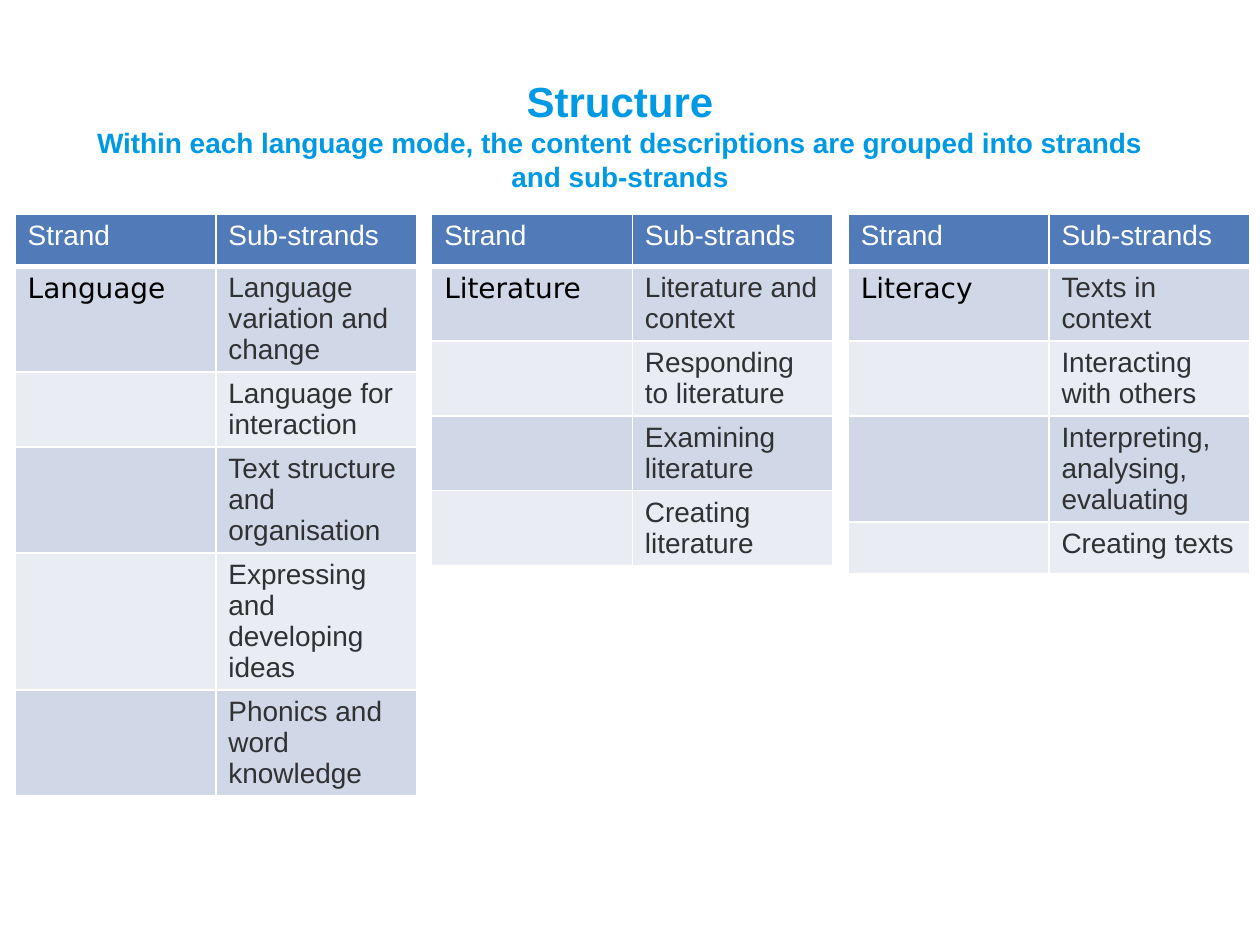
from pptx import Presentation
from pptx.dml.color import RGBColor as Color
from pptx.enum.text import MSO_ANCHOR as Anchor, MSO_AUTO_SIZE as AutoSize, PP_ALIGN as Align
from pptx.oxml import parse_xml
from pptx.oxml.ns import nsdecls
from pptx.util import Inches, Pt

TITLE_BLUE = Color(0x00, 0x99, 0xE3)
HEADER_BLUE = Color(0x51, 0x7A, 0xB8)
BAND_DARK = Color(0xD0, 0xD7, 0xE6)
BAND_LIGHT = Color(0xE9, 0xEC, 0xF3)
INK = Color(0x30, 0x31, 0x32)
BLACK = Color(0x00, 0x00, 0x00)
WHITE = Color(0xFF, 0xFF, 0xFF)

STRANDS = {
    "Language": [
        "Language variation and change",
        "Language for interaction",
        "Text structure and organisation",
        "Expressing and developing ideas",
        "Phonics and word knowledge",
    ],
    "Literature": [
        "Literature and context",
        "Responding to literature",
        "Examining literature",
        "Creating literature",
    ],
    "Literacy": [
        "Texts in context",
        "Interacting with others",
        "Interpreting, analysing, evaluating",
        "Creating texts",
    ],
}


class StrandSlide:
    """Style and current slide, measured on a grid of 100 columns by 100 rows."""

    body_font = "Arial"
    strand_font = "DejaVu Sans"
    body_size = 16
    title_size = 24

    def __init__(self, presentation):
        self.column = presentation.slide_width / 100
        self.row = presentation.slide_height / 100
        self.slide = presentation.slides.add_slide(presentation.slide_layouts[5])

    def area(self, left, top, width, height):
        return (int(left * self.column), int(top * self.row),
                int(width * self.column), int(height * self.row))

    def run(self, paragraph, text, color, size=body_size, font=body_font, bold=False):
        run = paragraph.add_run()
        run.text = text
        run.font.name, run.font.size, run.font.bold = font, Pt(size), bold
        run.font.color.rgb = color

    def title(self, heading, subtitle, left, top, width, height):
        shape = self.slide.shapes.title
        shape.left, shape.top, shape.width, shape.height = self.area(left, top, width, height)
        frame = shape.text_frame
        frame.word_wrap, frame.auto_size = True, AutoSize.NONE
        frame.vertical_anchor = Anchor.MIDDLE
        paragraph = frame.paragraphs[0]
        paragraph.alignment = Align.CENTER
        self.run(paragraph, heading, TITLE_BLUE, self.title_size, bold=True)
        paragraph.add_line_break()
        self.run(paragraph, subtitle, TITLE_BLUE, bold=True)

    def cell(self, cell, text, fill, color, font=body_font, top=1, bottom=1):
        cell.fill.solid()
        cell.fill.fore_color.rgb = fill
        properties = cell._tc.get_or_add_tcPr()
        borders = {"lnL": 1, "lnR": 1, "lnT": top, "lnB": bottom}
        for position, (tag, width) in enumerate(borders.items()):
            properties.insert(position, parse_xml(
                f'<a:{tag} {nsdecls("a")} w="{Pt(width)}"><a:solidFill>'
                f'<a:srgbClr val="{WHITE}"/></a:solidFill></a:{tag}>'))
        if text:
            self.run(cell.text_frame.paragraphs[0], text, color, font=font)

    def strand_table(self, strand, sub_strands, left, top, width, row_height):
        count = len(sub_strands) + 1
        area = self.area(left, top, width, row_height * count)
        table = self.slide.shapes.add_table(count, 2, *area).table
        for index, heading in enumerate(("Strand", "Sub-strands")):
            self.cell(table.cell(0, index), heading, HEADER_BLUE, WHITE, bottom=3)
        for index, sub_strand in enumerate(sub_strands, 1):
            first = index == 1
            fill = BAND_DARK if index % 2 else BAND_LIGHT
            top_border = 3 if first else 1
            self.cell(table.cell(index, 0), strand if first else "", fill, BLACK,
                      self.strand_font, top=top_border)
            self.cell(table.cell(index, 1), sub_strand, fill, INK, top=top_border)


def main():
    presentation = Presentation()
    presentation.slide_width, presentation.slide_height = Inches(10), Inches(7.5)
    slide = StrandSlide(presentation)
    slide.title(
        "Structure",
        "Within each language mode, the content descriptions are grouped into "
        "strands and sub-strands",
        left=6.7, top=5.87, width=85, height=16.67)
    for index, (strand, sub_strands) in enumerate(STRANDS.items()):
        slide.strand_table(strand, sub_strands, left=1.2 + 33.06 * index,
                           top=22.7, width=31.86, row_height=5.47)
    presentation.save("out.pptx")


if __name__ == "__main__":
    main()
